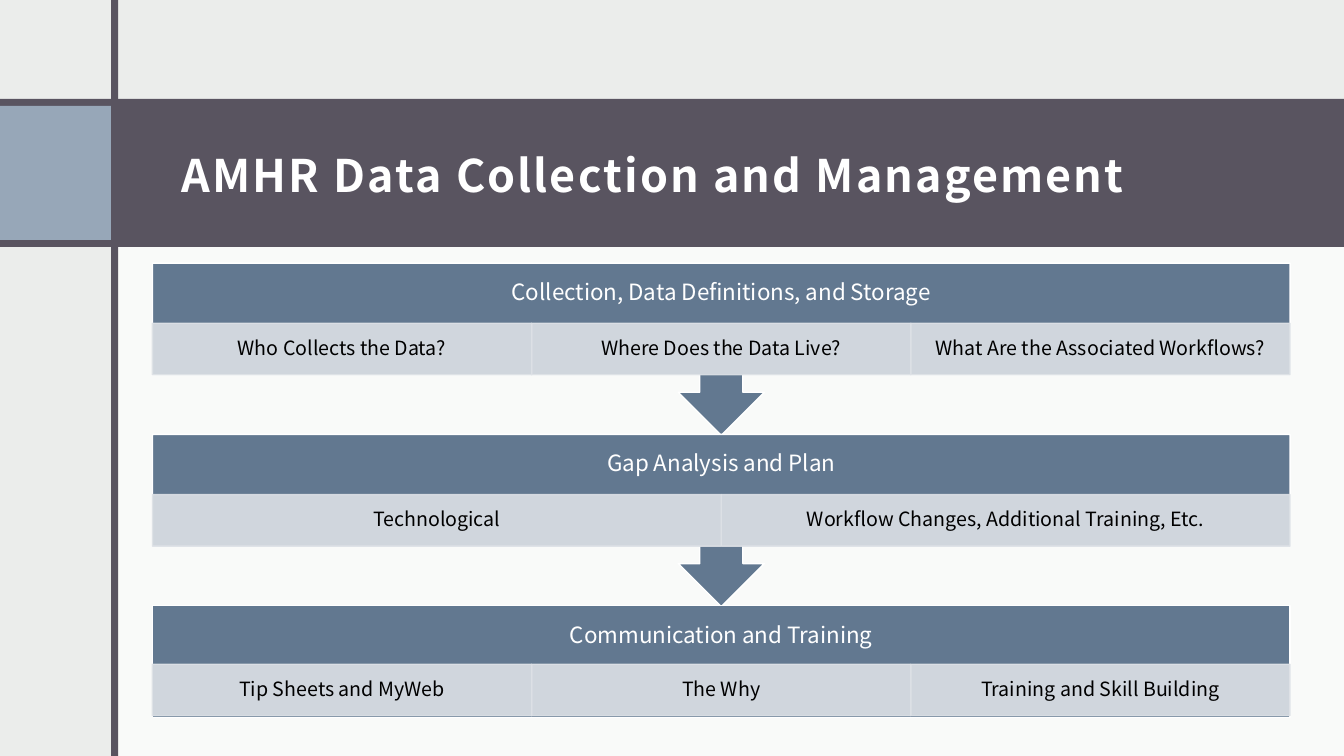
"""Build the data collection and management process slide."""
from lxml import etree
from pptx import Presentation
from pptx.dml.color import RGBColor
from pptx.enum.shapes import MSO_SHAPE
from pptx.enum.text import MSO_ANCHOR, MSO_AUTO_SIZE, PP_ALIGN
from pptx.oxml.ns import qn
from pptx.util import Pt

RECT = MSO_SHAPE.RECTANGLE
CALLOUT = MSO_SHAPE.DOWN_ARROW_CALLOUT
MIDDLE = MSO_ANCHOR.MIDDLE
CENTER, LEFT = PP_ALIGN.CENTER, PP_ALIGN.LEFT
NO_FIT = MSO_AUTO_SIZE.NONE

FONT = "Noto Sans CJK JP"
WHITE, BLACK = "FFFFFF", "000000"
PAPER, PLUM, MIST = "EBEDEB", "595460", "97A7B8"
SLATE, PALE = "627890", "DDE1E6"

STEP_LEFT, STEP_TOP, STEP_WIDTH, STEP_PITCH = 108.9, 187.9, 812.6, 122.4
CALLOUT_HEIGHT, BLOCK_HEIGHT = 123, 80
HEADER_HEIGHT, CELL_HEIGHT = 43, 36.8

STEPS = [
    ("Collection, Data Definitions, and Storage",
     ["Who Collects the Data?", "Where Does the Data Live?",
      "What Are the Associated Workflows?"]),
    ("Gap Analysis and Plan",
     ["Technological", "Workflow Changes, Additional Training, Etc."]),
    ("Communication and Training",
     ["Tip Sheets and MyWeb", "The Why", "Training and Skill Building"]),
]


def paint(fmt, color, alpha=100):
    fmt.solid()
    fmt.fore_color.rgb = RGBColor.from_string(color)
    if alpha < 100:
        for clr in fmt._xPr.iter(qn("a:srgbClr")):
            if clr.getparent().getparent() is fmt._xPr:
                etree.SubElement(clr, qn("a:alpha"), val=str(alpha * 1000))


def add_block(s, kind, box, color, alpha=100, line=None):
    sp = s.shapes.add_shape(kind, *map(Pt, box))
    sp.shadow.inherit = False
    paint(sp.fill, color, alpha)
    if line:
        sp.line.width = Pt(1)
        paint(sp.line.fill, line, alpha)
    else:
        sp.line.fill.background()
    return sp


def write(sp, text, size, color, insets, align=CENTER):
    tf = sp.text_frame
    tf.word_wrap = True
    tf.auto_size = NO_FIT
    tf.vertical_anchor = MIDDLE
    tf.margin_left, tf.margin_top, tf.margin_right, tf.margin_bottom = map(Pt, insets)
    p = tf.paragraphs[0]
    p.text = text
    p.alignment = align
    p.line_spacing = 0.9
    p.font.name = FONT
    p.font.size = Pt(size)
    p.font.color.rgb = RGBColor.from_string(color)
    return p


def add_frame(s):
    add_block(s, RECT, (82, 168, 878, 372), WHITE, 75)
    add_block(s, RECT, (0, 70.6, 960, 105.8), PLUM)
    add_block(s, RECT, (0, 75.6, 79.4, 95.8), MIST)
    add_block(s, RECT, (79.4, 0, 5, 540), PLUM)


def add_title(s, text):
    title = s.shapes.title
    title.left, title.top, title.width, title.height = map(Pt, (121, 75.6, 788.4, 95.8))
    p = write(title, text, 32, WHITE, (8.6, 14.4, 8.6, 7.2), LEFT)
    p.font.bold = True
    p.runs[0].font._element.set("spc", "150")
    title.element.getparent().append(title.element)


def add_step(s, top, header, cells, last):
    kind, height = (RECT, BLOCK_HEIGHT) if last else (CALLOUT, CALLOUT_HEIGHT)
    add_block(s, kind, (STEP_LEFT, top, STEP_WIDTH, height), SLATE, line=WHITE)
    tb = s.shapes.add_textbox(*map(Pt, (STEP_LEFT, top, STEP_WIDTH, HEADER_HEIGHT)))
    write(tb, header, 16, WHITE, (8.6,) * 4)
    width = STEP_WIDTH / len(cells)
    cell_top = top + HEADER_HEIGHT - (1.2 if last else 0)
    for i, text in enumerate(cells):
        box = (STEP_LEFT + i * width, cell_top, width, CELL_HEIGHT)
        write(add_block(s, RECT, box, PALE, 90, PALE), text, 14, BLACK, (8, 1.4, 8, 1.4))


def main():
    prs = Presentation()
    prs.slide_width, prs.slide_height = Pt(960), Pt(540)
    s = prs.slides.add_slide(prs.slide_layouts[5])
    paint(s.background.fill, PAPER)
    add_frame(s)
    add_title(s, "AMHR Data Collection and Management")
    for i, (header, cells) in enumerate(STEPS):
        add_step(s, STEP_TOP + i * STEP_PITCH, header, cells, i == len(STEPS) - 1)
    prs.save("out.pptx")


if __name__ == "__main__":
    main()
